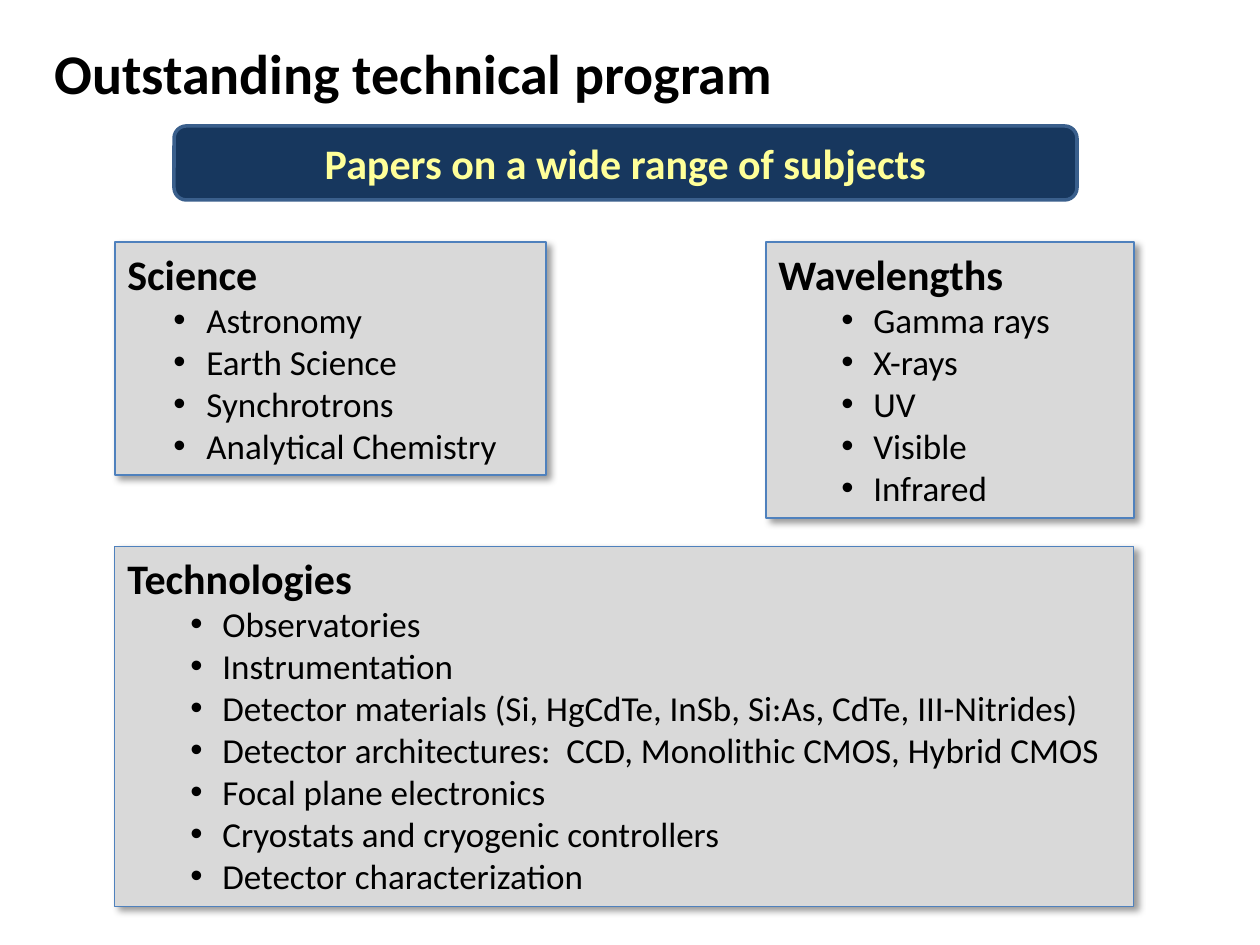
"""Build the technical program slide with its banner and three topic panels."""
from lxml import etree
from pptx import Presentation, util as u
from pptx.dml.color import RGBColor
from pptx.enum import shapes, text
from pptx.oxml.ns import qn

PX = 914400 / 126
THEME = {
    "font": "Calibri", "ink": "000000", "panel": "D9D9D9", "edge": "4F81BD",
    "navy": "17375E", "rim": "3A5F8C", "gold": "FFFF99",
    "title": 32, "head": 24, "item": 20,
}


def px(num):
    return u.Emu(round(num * PX))


def write(para, words, size, color="ink", bold=True):
    run = para.add_run()
    run.text = words
    run.font.name = THEME["font"]
    run.font.size = u.Pt(THEME[size])
    run.font.bold = bold
    run.font.color.rgb = RGBColor.from_string(THEME[color])


deck = Presentation()
deck.slide_width, deck.slide_height = px(1260), px(945)
slide = deck.slides.add_slide(deck.slide_layouts[6])

title = slide.shapes.add_textbox(px(42), px(32), px(1166), px(81))
title.text_frame.word_wrap = True
write(title.text_frame.paragraphs[0], "Outstanding technical program", "title")

panels = [
    ("Science", (115, 242, 431, 233), 79, 33, 0.75,
     ["Astronomy", "Earth Science", "Synchrotrons", "Analytical Chemistry"]),
    ("Wavelengths", (766, 242, 368, 276), 95, 32, 0.75,
     ["Gamma rays", "X-rays", "UV", "Visible", "Infrared"]),
    ("Technologies", (115, 546, 1019, 360), 95, 32, 0.5,
     ["Observatories", "Instrumentation",
      "Detector materials (Si, HgCdTe, InSb, Si:As, CdTe, III-Nitrides)",
      "Detector architectures:  CCD, Monolithic CMOS, Hybrid CMOS",
      "Focal plane electronics", "Cryostats and cryogenic controllers",
      "Detector characterization"]),
]
for head, area, left, hang, width, items in panels:
    panel = slide.shapes.add_shape(shapes.MSO_SHAPE.RECTANGLE, *map(px, area))
    panel.fill.solid()
    panel.fill.fore_color.rgb = RGBColor.from_string(THEME["panel"])
    panel.line.color.rgb = RGBColor.from_string(THEME["edge"])
    panel.line.width = u.Pt(width)
    panel.shadow.inherit = False
    glow = etree.SubElement(
        panel._element.spPr.find(qn("a:effectLst")), qn("a:outerShdw"),
        blurRad=str(u.Pt(4)), dist=str(u.Pt(3)), dir="2700000",
        algn="tl", rotWithShape="0")
    tint = etree.SubElement(glow, qn("a:srgbClr"), val=THEME["ink"])
    etree.SubElement(tint, qn("a:alpha"), val="40000")

    frame = panel.text_frame
    frame.word_wrap = True
    frame.auto_size = text.MSO_AUTO_SIZE.SHAPE_TO_FIT_TEXT
    frame.vertical_anchor = text.MSO_ANCHOR.TOP
    para = frame.paragraphs[0]
    para.alignment = text.PP_ALIGN.LEFT
    write(para, head, "head")
    for item in items:
        para = frame.add_paragraph()
        para.level = 1
        para.alignment = text.PP_ALIGN.LEFT
        props = para._p.get_or_add_pPr()
        props.set("marL", str(px(left)))
        props.set("indent", str(px(-hang)))
        etree.SubElement(props, qn("a:buFont"), typeface="Arial")
        etree.SubElement(props, qn("a:buChar"), char="•")
        write(para, item, "item", bold=False)

banner = slide.shapes.add_shape(
    shapes.MSO_SHAPE.ROUNDED_RECTANGLE, px(174), px(126), px(903), px(74))
banner.shadow.inherit = False
banner.fill.solid()
banner.fill.fore_color.rgb = RGBColor.from_string(THEME["navy"])
banner.line.color.rgb = RGBColor.from_string(THEME["rim"])
banner.line.width = u.Pt(2)
banner.text_frame.word_wrap = True
banner.text_frame.vertical_anchor = text.MSO_ANCHOR.MIDDLE
para = banner.text_frame.paragraphs[0]
para.alignment = text.PP_ALIGN.CENTER
write(para, "Papers on a wide range of subjects", "head", "gold")

deck.save("out.pptx")
